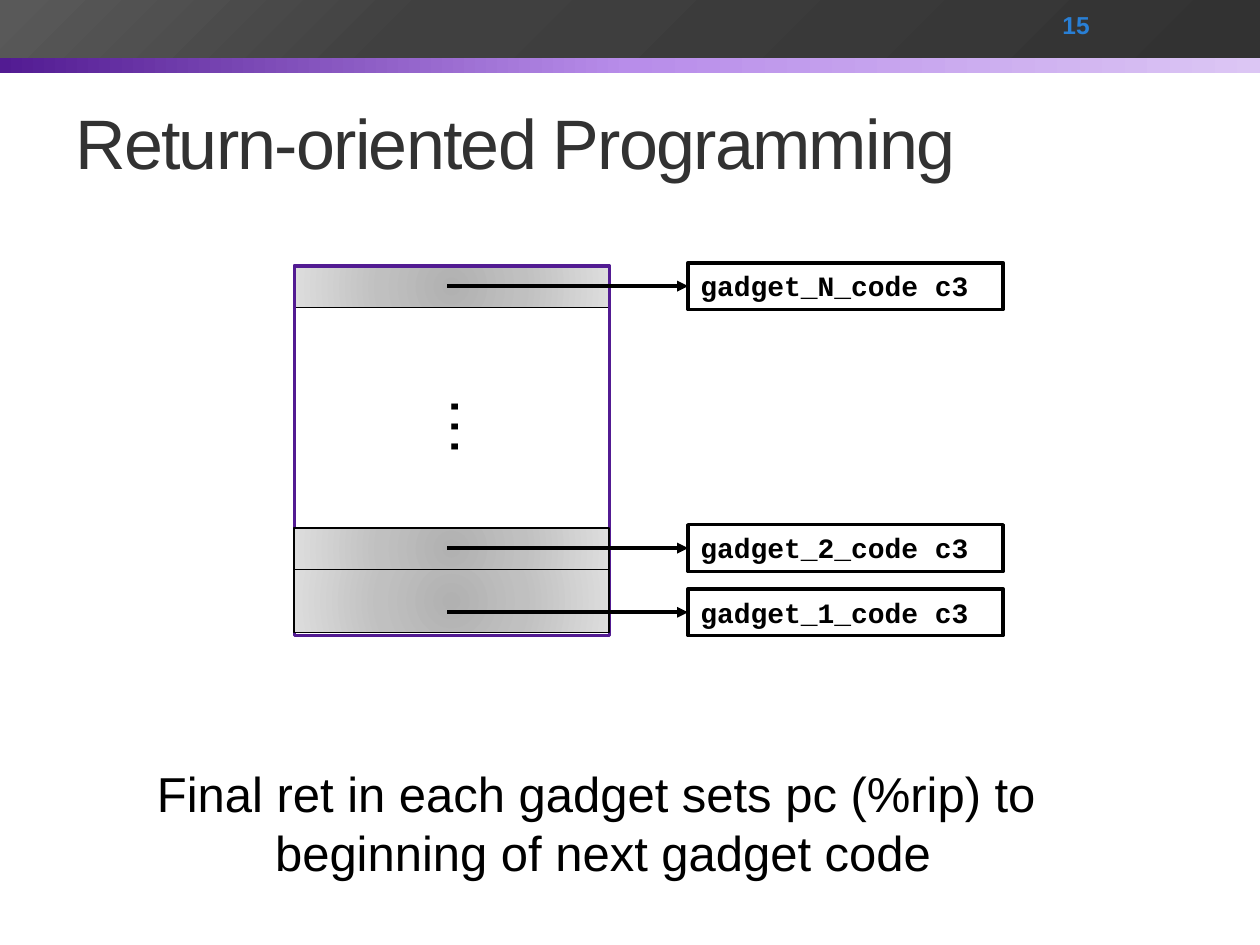
from typing import NamedTuple

from lxml import etree
from pptx import Presentation
from pptx.dml.color import RGBColor
from pptx.enum.shapes import MSO_CONNECTOR, MSO_SHAPE
from pptx.enum.text import MSO_ANCHOR, MSO_AUTO_SIZE, PP_ALIGN
from pptx.oxml import parse_xml
from pptx.oxml.ns import nsdecls, qn
from pptx.util import Pt

RECT = MSO_SHAPE.RECTANGLE
LINE = MSO_CONNECTOR.STRAIGHT
TOP, MID = MSO_ANCHOR.TOP, MSO_ANCHOR.MIDDLE
LEFT, MIDDLE = PP_ALIGN.LEFT, PP_ALIGN.CENTER
GROW = MSO_AUTO_SIZE.SHAPE_TO_FIT_TEXT

HUES = {
    "ink": "000000", "paper": "FFFFFF", "title": "323232",
    "frame": "521B92", "page": "297FD5",
}
# Gradient stops: percent and colour
STRIPE = {0: "521B92", 50: "B88DEA", 100: "DCC6F4"}
HEADER = {0: "323232", 66: "404040", 99: "595959"}
SLOT = {0: "B1B1B1", 45: "C0C0C0", 100: "DDDDDD"}
ROUND = ('<a:path path="circle"><a:fillToRect l="50000" t="50000" '
         'r="50000" b="50000"/></a:path>')

THICK, THIN = 2.08, 0.75
WIDE = 180  # width of the stack and of the code boxes
STACK, TAIL, CODE = 168, 255.6, 393.2  # left edges and arrow start


class Box(NamedTuple):
    x: float
    y: float
    w: float
    h: float


class Gadget(NamedTuple):
    name: str
    top: float   # top of the stack slot
    tall: float  # height of the stack slot
    mid: float   # height of the arrow


class Label(NamedTuple):
    box: Box
    lines: tuple
    look: dict
    align: int = LEFT
    anchor: int = TOP
    wrap: bool = True
    turn: float = 0


GADGETS = (
    Gadget("gadget_N_code c3", 151.9, 23.7, 163.5),
    Gadget("gadget_1_code c3", 325.4, 36.2, 349.9),
    Gadget("gadget_2_code c3", 301.7, 23.7, 313.2),
)
MONO = {"name": "Courier New", "size": Pt(16), "bold": True}
LABELS = (
    Label(Box(36, 42, 648, 77.5), ("Return-oriented Programming",),
          {"name": "Arial", "size": Pt(40), "hue": "title", "track": -100},
          anchor=MID),
    Label(Box(79, 432.6, 531, 75),
          ("Final ret in each gadget sets pc (%rip) to ",
           "beginning of next gadget code"),
          {"name": "Arial", "size": Pt(28)}, align=MIDDLE, wrap=False),
    Label(Box(600, 1.4, 84, 26), ("15",),
          {"name": "Arial", "size": Pt(14), "bold": True, "hue": "page"},
          anchor=MID),
    Label(Box(222.5, 218.2, 51, 51), ("…",),
          {"name": "Arial", "size": Pt(36)}, wrap=False, turn=270),
)


def tint(name: str) -> RGBColor:
    return RGBColor.from_string(HUES[name])


def write(shape, lines: tuple, look: dict, align: int = LEFT) -> None:
    """Fill a shape with one paragraph per line."""
    frame = shape.text_frame
    frame.text = "\n".join(lines)
    for para in frame.paragraphs:
        para.alignment = align
        run = para.runs[0]
        run.font.color.rgb = tint(look.get("hue", "ink"))
        for key, value in look.items():
            if key == "track":
                run.font._element.set("spc", str(value))
            elif key != "hue":
                setattr(run.font, key, value)


def blend(shape, stops: dict, way: str) -> None:
    """Swap the fill of a shape for a gradient."""
    shape.fill.background()
    marks = "".join(
        f'<a:gs pos="{pos * 1000}"><a:srgbClr val="{hue}"/></a:gs>'
        for pos, hue in stops.items())
    grad = parse_xml(f'<a:gradFill {nsdecls("a")} rotWithShape="1">'
                     f'<a:gsLst>{marks}</a:gsLst>{way}</a:gradFill>')
    props = shape._element.spPr
    props.replace(props.find(qn("a:noFill")), grad)


def block(slide, box: Box, line: str = "", width: float = THICK):
    """Draw an unfilled rectangle, with an outline if a colour is named."""
    shape = slide.shapes.add_shape(RECT, *map(Pt, box))
    shape.shadow.inherit = False
    shape.fill.background()
    if line:
        shape.line.color.rgb = tint(line)
        shape.line.width = Pt(width)
    else:
        shape.line.fill.background()
    return shape


def arrow(slide, y: float) -> None:
    link = slide.shapes.add_connector(LINE, Pt(TAIL), Pt(y), Pt(CODE), Pt(y))
    link.line.color.rgb = tint("ink")
    link.line.width = Pt(THICK)
    etree.SubElement(link.line._get_or_add_ln(), qn("a:tailEnd"),
                     type="triangle")
    etree.SubElement(link._element.spPr, qn("a:effectLst"))


def label(slide, item: Label) -> None:
    shape = slide.shapes.add_textbox(*map(Pt, item.box))
    shape.rotation = item.turn
    write(shape, item.lines, item.look, item.align)
    shape.text_frame.word_wrap = item.wrap
    shape.text_frame.vertical_anchor = item.anchor


def gadget(slide, item: Gadget) -> None:
    """Draw a code box, its stack slot and the arrow between them."""
    high = 26.7
    code = block(slide, Box(CODE, item.mid - high / 2, WIDE, high), "ink")
    code.fill.solid()
    code.fill.fore_color.rgb = tint("paper")
    write(code, (item.name,), MONO)
    code.text_frame.vertical_anchor = TOP
    code.text_frame.word_wrap = True
    code.text_frame.auto_size = GROW
    slot = block(slide, Box(STACK, item.top, WIDE, item.tall), "ink", THIN)
    blend(slot, SLOT, ROUND)
    if item is GADGETS[0]:  # the frame lies over the top slot only
        block(slide, Box(STACK + 0.3, item.top, WIDE, 211.3), "frame")
    arrow(slide, item.mid)


def main() -> None:
    deck = Presentation()
    deck.slide_width, deck.slide_height = Pt(720), Pt(540)
    slide = deck.slides.add_slide(deck.slide_layouts[6])

    # Header bands
    blend(block(slide, Box(0, 17.3, 720, 24.4)), STRIPE, '<a:lin ang="0"/>')
    blend(block(slide, Box(0, 0, 720, 33.1)), HEADER,
          '<a:lin ang="13500000"/>')

    # Stack and gadgets
    for item in GADGETS:
        gadget(slide, item)

    # Title, caption, page number and dots
    for item in LABELS:
        label(slide, item)

    deck.save("out.pptx")


if __name__ == "__main__":
    main()
